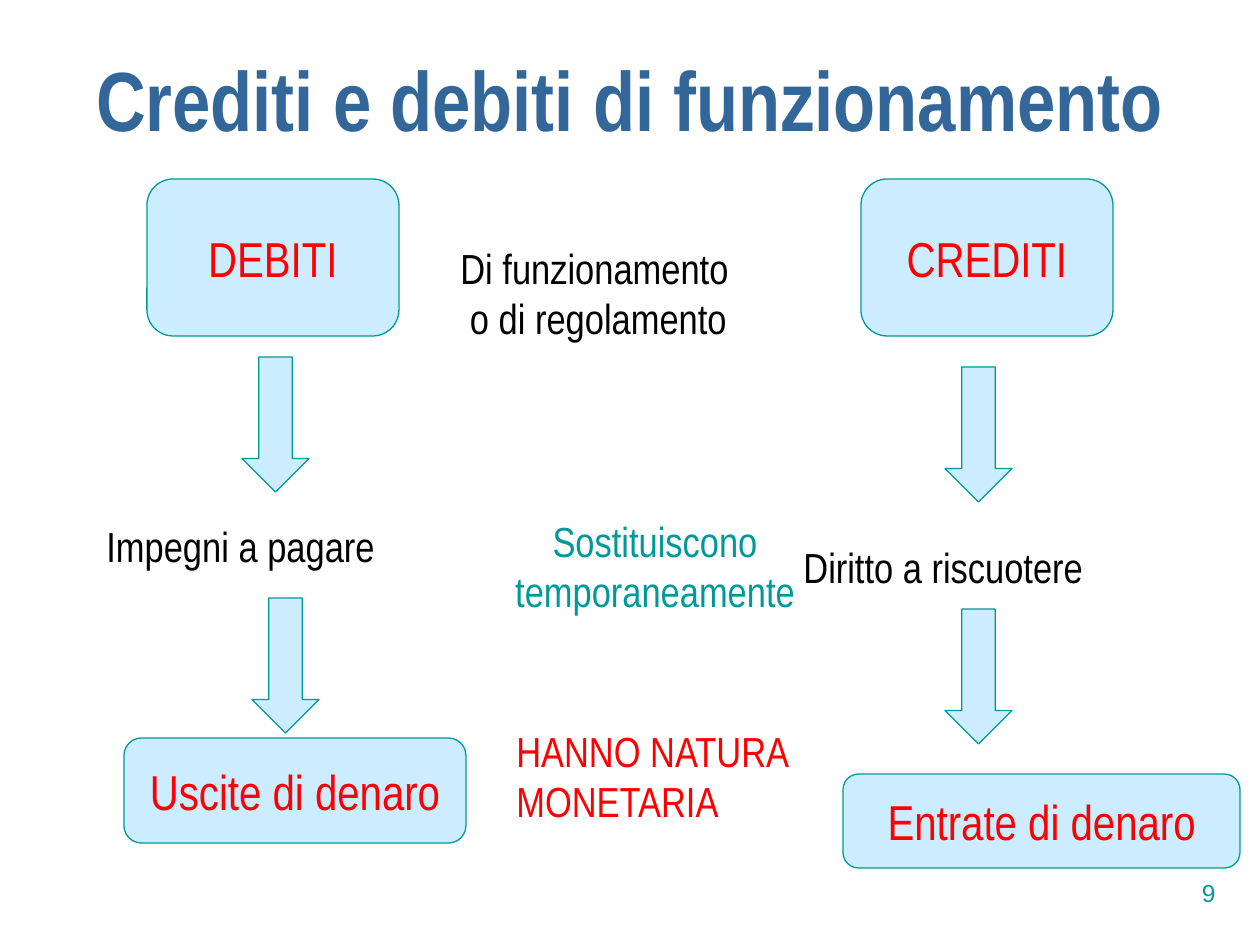
from pptx import Presentation
from pptx.dml.color import RGBColor
from pptx.enum.shapes import MSO_SHAPE
from pptx.enum.text import MSO_ANCHOR, MSO_AUTO_SIZE, PP_ALIGN
from pptx.util import Pt

LEFT, CENTER, RIGHT = PP_ALIGN.LEFT, PP_ALIGN.CENTER, PP_ALIGN.RIGHT
TOP, MIDDLE = MSO_ANCHOR.TOP, MSO_ANCHOR.MIDDLE
ROUNDED, DOWN_ARROW = MSO_SHAPE.ROUNDED_RECTANGLE, MSO_SHAPE.DOWN_ARROW
NO_AUTOFIT = MSO_AUTO_SIZE.NONE

PX = 914400 / 126  # EMU per px


class Theme:
    blue = RGBColor(0x33, 0x66, 0x99)
    teal = RGBColor(0x00, 0x99, 0x99)
    pale = RGBColor(0xCC, 0xEC, 0xFF)
    red = RGBColor(0xFF, 0x00, 0x00)
    ink = RGBColor(0x01, 0x00, 0x00)
    font, number_font = "Arial Narrow", "Arial"
    title, box, label, number = Pt(48), Pt(28), Pt(24), Pt(14)
    line = Pt(0.75)


def emu(*lengths):
    return [round(v * PX) for v in lengths]


def write(sp, text, size, color, align=LEFT, anchor=TOP, font=Theme.font):
    tf = sp.text_frame
    tf.text = text
    tf.word_wrap = True
    tf.auto_size = NO_AUTOFIT
    tf.vertical_anchor = anchor
    for p in tf.paragraphs:
        p.alignment = align
        p.font.size, p.font.name = size, font
        p.font.color.rgb = color


prs = Presentation()
prs.slide_width, prs.slide_height = emu(1260, 945)
s = prs.slides.add_slide(prs.slide_layouts[5])

# Title
title = s.shapes.title
title.left, title.top, title.width, title.height = emu(0, 0, 1260, 220)
write(title, "Crediti e debiti di funzionamento", Theme.title, Theme.blue, CENTER, MIDDLE)
p = title.text_frame.paragraphs[0]
p.font.bold = True
p.line_spacing = 0.7

# Boxes and down arrows of the two columns
for kind, text, *place in [
    (ROUNDED, "DEBITI", 147, 179, 252, 157),
    (ROUNDED, "CREDITI", 861, 179, 252, 157),
    (DOWN_ARROW, "", 242, 357, 67, 135),
    (DOWN_ARROW, "", 945, 367, 67, 135),
    (DOWN_ARROW, "", 252, 598, 67, 135),
    (DOWN_ARROW, "", 945, 609, 67, 135),
    (ROUNDED, "Uscite di denaro", 124, 738, 342, 105),
    (ROUNDED, "Entrate di denaro", 843, 774, 397, 94),
]:
    sp = s.shapes.add_shape(kind, *emu(*place))
    sp.shadow.inherit = False
    sp.fill.solid()
    sp.fill.fore_color.rgb = Theme.pale
    sp.line.color.rgb = Theme.teal
    sp.line.width = Theme.line
    if text:
        write(sp, text, Theme.box, Theme.red, CENTER, MIDDLE)

# Labels
for text, color, align, *place in [
    ("Impegni a pagare", Theme.ink, LEFT, 94, 514, 358, 63),
    ("Diritto a riscuotere", Theme.ink, LEFT, 791, 535, 382, 63),
    ("HANNO NATURA\nMONETARIA", Theme.red, LEFT, 504, 719, 364, 113),
    ("Di funzionamento\n o di regolamento", Theme.ink, LEFT, 448, 236, 360, 113),
    ("Sostituiscono\ntemporaneamente", Theme.teal, CENTER, 466, 509, 378, 113),
]:
    write(s.shapes.add_textbox(*emu(*place)), text, Theme.label, color, align)

# Slide number
number = s.shapes.add_textbox(*emu(966, 861, 262, 63))
write(number, "9", Theme.number, Theme.teal, RIGHT, MIDDLE, Theme.number_font)

prs.save("out.pptx")
